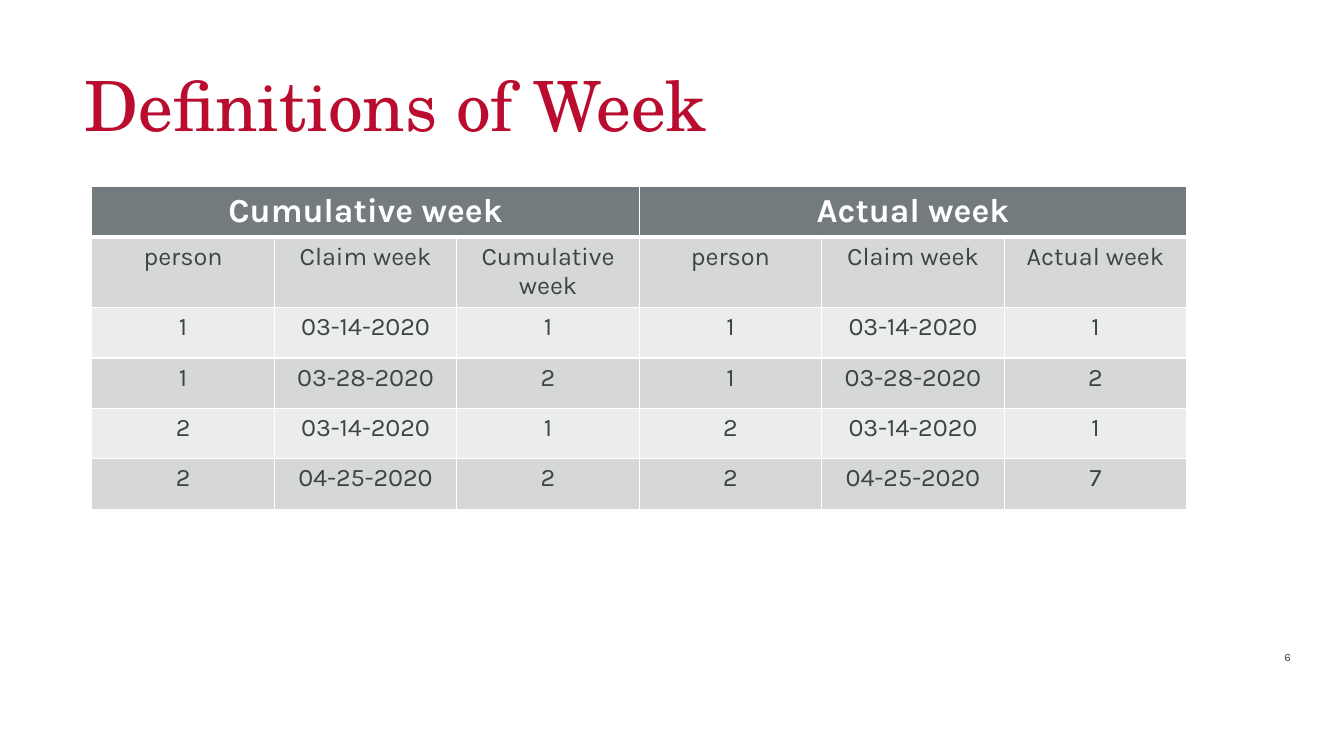
from lxml.etree import SubElement
from pptx import Presentation
from pptx.dml.color import RGBColor
from pptx.enum.text import MSO_ANCHOR, PP_ALIGN
from pptx.oxml.ns import qn
from pptx.util import Inches, Pt


def color(value):
    """Turn a hex string into a colour."""
    return RGBColor.from_string(value)


class SlideBuilder:
    """Hold the style and the current slide; boxes are percentages of its size."""

    BODY_FONT, TITLE_FONT = "Karla", "TeX Gyre Schola"
    INK, RED, WHITE = "3F4443", "BA0C2F", "FFFFFF"
    HEADER, BANDS = "737B7E", ("EBECEC", "D5D7D8")

    def __init__(self, presentation):
        """Add a title-only slide."""
        self.width = presentation.slide_width
        self.height = presentation.slide_height
        self.slide = presentation.slides.add_slide(presentation.slide_layouts[5])

    def box(self, left, top, width, height):
        """Convert percentages to slide lengths."""
        return (int(self.width * left / 100), int(self.height * top / 100),
                int(self.width * width / 100), int(self.height * height / 100))

    def add_text(self, frame, text, size, ink, align, font=BODY_FONT, bold=False):
        """Add one formatted run and return its paragraph."""
        paragraph = frame.paragraphs[0]
        paragraph.alignment = align
        run = paragraph.add_run()
        run.text = text
        run.font.name, run.font.size, run.font.bold = font, Pt(size), bold
        run.font.color.rgb = color(ink)
        return paragraph

    def title(self, text, area):
        """Place and format the title placeholder."""
        shape = self.slide.shapes.title
        shape.left, shape.top, shape.width, shape.height = self.box(*area)
        frame = shape.text_frame
        frame.word_wrap = True
        frame.vertical_anchor = MSO_ANCHOR.TOP
        paragraph = self.add_text(frame, text, 49.5, self.RED, PP_ALIGN.LEFT, self.TITLE_FONT)
        paragraph.line_spacing = 0.9

    def page_number(self, text, area):
        """Add the right-aligned page number."""
        frame = self.slide.shapes.add_textbox(*self.box(*area)).text_frame
        frame.word_wrap = True
        frame.vertical_anchor = MSO_ANCHOR.MIDDLE
        self.add_text(frame, text, 8, self.INK, PP_ALIGN.RIGHT)

    def borders(self, cell, top, bottom):
        """Draw white cell borders with the given top and bottom widths."""
        properties = cell._tc.get_or_add_tcPr()
        for side, points in (("L", 1), ("R", 1), ("T", top), ("B", bottom)):
            line = SubElement(properties, qn(f"a:ln{side}"), w=str(Pt(points)))
            fill = SubElement(line, qn("a:solidFill"))
            SubElement(fill, qn("a:srgbClr"), val=self.WHITE)

    def table(self, groups, rows, left, top, width, heights):
        """Add a banded table with equal columns under merged group headings."""
        columns = len(rows[0])
        span = columns // len(groups)
        area = self.box(left, top, width, sum(heights))
        table = self.slide.shapes.add_table(len(heights), columns, *area).table
        for column in table.columns:
            column.width = area[2] // columns
        for row, height in zip(table.rows, heights):
            row.height = int(self.height * height / 100)
        for row_index, row in enumerate(table.rows):
            for cell in row.cells:
                self.borders(cell, 3 if row_index == 1 else 1, 1 if row_index else 3)
                cell.fill.solid()
                fill = self.BANDS[row_index % 2] if row_index else self.HEADER
                cell.fill.fore_color.rgb = color(fill)
        for index, heading in enumerate(groups):
            cell = table.cell(0, index * span)
            cell.merge(table.cell(0, (index + 1) * span - 1))
            self.add_text(cell.text_frame, heading, 24, self.WHITE, PP_ALIGN.CENTER, bold=True)
        for row_index, values in enumerate(rows, 1):
            for column_index, value in enumerate(values):
                frame = table.cell(row_index, column_index).text_frame
                self.add_text(frame, value, 18, self.INK, PP_ALIGN.CENTER)


def main():
    """Build and save the week definitions slide."""
    presentation = Presentation()
    presentation.slide_width, presentation.slide_height = Inches(13.33), Inches(7.5)
    builder = SlideBuilder(presentation)
    groups = ("Cumulative week", "Actual week")
    claims = (("1", "03-14-2020", "1", "1"), ("1", "03-28-2020", "2", "2"),
              ("2", "03-14-2020", "1", "1"), ("2", "04-25-2020", "2", "7"))
    rows = [[text for group in groups for text in ("person", "Claim week", group)]]
    for person, week, cumulative, actual in claims:
        rows.append([person, week, cumulative, person, week, actual])
    builder.page_number("6", (92.72, 84.27, 4.05, 5.33))
    builder.title("Definitions of Week", (5.55, 8.8, 86.27, 12))
    builder.table(groups, rows, 6.83, 24.67, 81.47, [6.67, 9.2] + [6.67] * 4)
    presentation.save("out.pptx")


if __name__ == "__main__":
    main()
